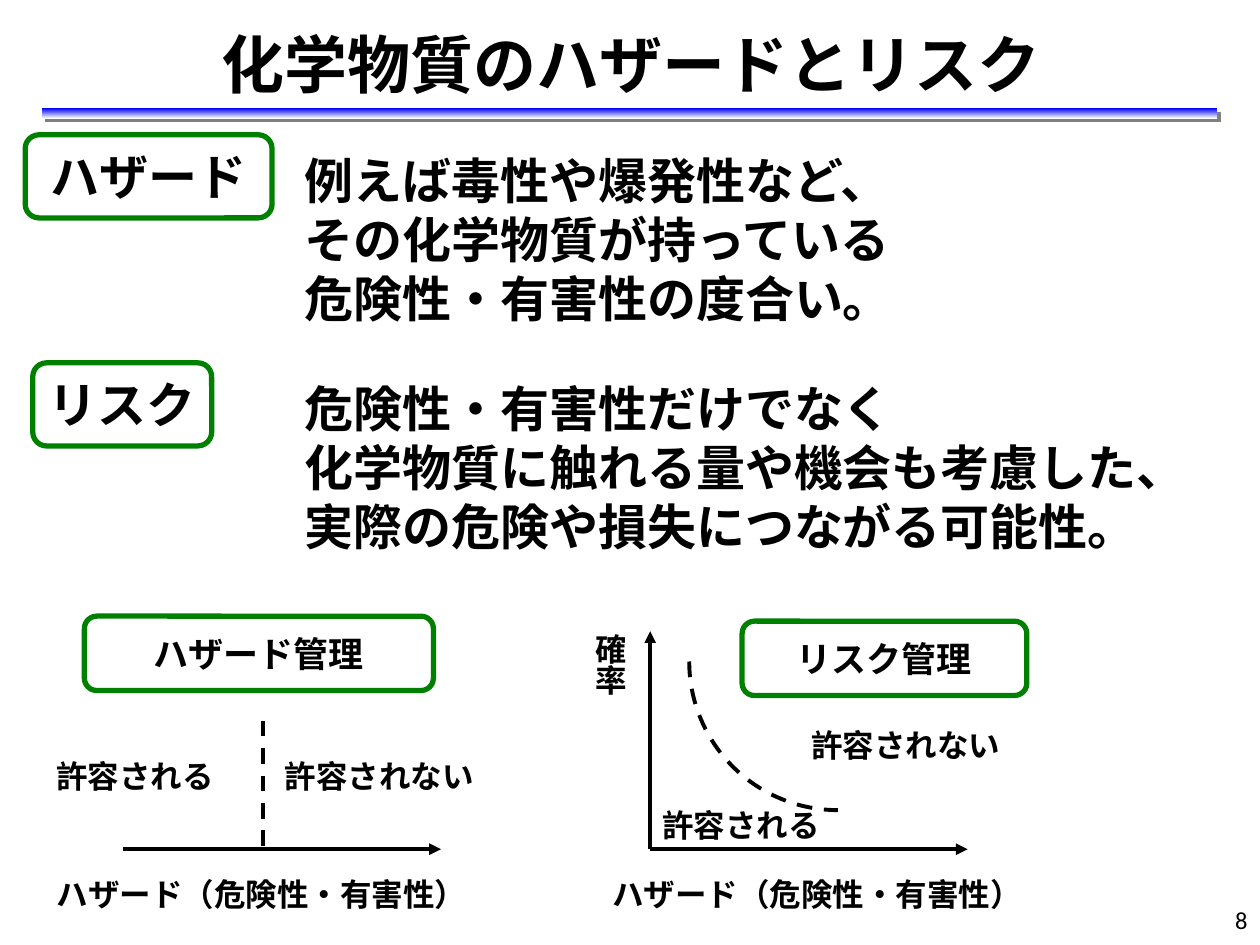
from math import cos, pi, sin

from lxml.etree import SubElement
from pptx import Presentation
from pptx.dml.color import RGBColor
from pptx.enum.dml import MSO_LINE
from pptx.enum.shapes import MSO_CONNECTOR, MSO_SHAPE
from pptx.enum.text import MSO_ANCHOR, PP_ALIGN
from pptx.oxml.ns import qn
from pptx.util import Inches, Pt

TITLE = "化学物質のハザードとリスク"
PAGE = "8"
AXIS_LABEL = "ハザード（危険性・有害性）"
ALLOWED, DENIED = "許容される", "許容されない"
BLACK, GREEN, BLUE, WHITE, GRAY = "000000", "008000", "0000FF", "FFFFFF", "808080"

BADGES = [
    ("ハザード", 28, (0.2, 1.07, 1.96, 0.66)),
    ("リスク", 28, (0.26, 2.88, 1.42, 0.66)),
    ("ハザード管理", 20, (0.67, 4.89, 2.77, 0.59)),
    ("リスク管理", 20, (5.89, 4.93, 2.26, 0.59)),
]
DEFINITIONS = [
    (["例えば毒性や爆発性など、", "その化学物質が持っている", "危険性・有害性の度合い。"],
     (2.32, 0.99, 5.59, 1.81)),
    (["危険性・有害性だけでなく",
      "化学物質に触れる量や機会も考慮した、実際の危険や損失につながる可能性。"],
     (2.32, 2.88, 6.85, 1.65)),
]
AXIS_Y, AXIS_LEN, LABEL_H = 6.74, 2.52, 0.39
HAZARD_X, RISK_X, LIMIT_X = 0.98, 5.16, 2.09
LABELS = [
    (AXIS_LABEL, (0.35, 6.9, 3.62)),
    (AXIS_LABEL, (4.76, 6.9, 3.62)),
    (ALLOWED, (0.35, 5.96, 1.73)),
    (DENIED, (2.16, 5.96, 1.89)),
    (ALLOWED, (RISK_X, AXIS_Y - LABEL_H, 1.73)),
    (DENIED, (6.34, 5.72, 1.89)),
]
LINES = [
    ((HAZARD_X, AXIS_Y), (HAZARD_X + AXIS_LEN, AXIS_Y), False),
    ((LIMIT_X, 5.72), (LIMIT_X, AXIS_Y), True),
    ((RISK_X, AXIS_Y), (RISK_X + AXIS_LEN, AXIS_Y), False),
    ((RISK_X, AXIS_Y), (RISK_X, 5.01), False),
]
CURVE_CENTER, CURVE_R, CURVE_STEPS = (6.65, 5.25), 1.18, 40


def color(value):
    return RGBColor.from_string(value)


def inches(values):
    return [Inches(v) for v in values]


def write(sp, lines, size=18, font="Arial", bold=True, align=None, wrap=True):
    tf = sp.text_frame
    tf.word_wrap = wrap
    tf.vertical_anchor = MSO_ANCHOR.MIDDLE
    for i, line in enumerate(lines):
        p = tf.add_paragraph() if i else tf.paragraphs[0]
        p.alignment = align
        r = p.add_run()
        r.text = line
        r.font.size, r.font.name, r.font.bold = Pt(size), font, bold
        r.font.color.rgb = color(BLACK)
    return sp


def add_text(box, lines, **fmt):
    return write(s.shapes.add_textbox(*inches(box)), lines, **fmt)


def stroke(sp, value=BLACK, width=2.25, dashed=False):
    sp.line.color.rgb = color(value)
    sp.line.width = Pt(width)
    if dashed:
        sp.line.dash_style = MSO_LINE.DASH


def add_rule():
    sp = s.shapes.add_shape(MSO_SHAPE.RECTANGLE, *inches((0.33, 0.86, 9.33, 0.08)))
    sp.line.fill.background()
    sp.fill.gradient()
    sp.fill.gradient_angle = 270
    for stop, value in zip(sp.fill.gradient_stops, (BLUE, WHITE)):
        stop.color.rgb = color(value)
    sp.shadow.inherit = False
    effects = sp._element.spPr.find(qn("a:effectLst"))
    shadow = SubElement(effects, qn("a:outerShdw"), blurRad="0", dist=str(Pt(2.8)),
                        dir=str(45 * 60000), algn="ctr", rotWithShape="0")
    SubElement(shadow, qn("a:srgbClr"), val=GRAY)


def add_badge(text, size, box):
    sp = s.shapes.add_shape(MSO_SHAPE.ROUNDED_RECTANGLE, *inches(box))
    sp.shadow.inherit = False
    sp.fill.background()
    stroke(sp, GREEN, 3)
    write(sp, [text], size=size, align=PP_ALIGN.CENTER, wrap=False)


def add_line(start, end, dashed):
    c = s.shapes.add_connector(MSO_CONNECTOR.STRAIGHT, *inches(start + end))
    stroke(c, dashed=dashed)
    if not dashed:
        SubElement(c.line._get_or_add_ln(), qn("a:tailEnd"), type="triangle")
    SubElement(c._element.spPr, qn("a:effectLst"))


def add_curve():
    cx, cy = CURVE_CENTER
    angles = [pi / 2 * i / CURVE_STEPS for i in range(CURVE_STEPS + 1)]
    points = [(Inches(cx - CURVE_R * cos(a)), Inches(cy + CURVE_R * sin(a)))
              for a in angles]
    builder = s.shapes.build_freeform(*points[0])
    builder.add_line_segments(points[1:], close=False)
    sp = builder.convert_to_shape()
    sp.shadow.inherit = False
    sp.fill.background()
    stroke(sp, dashed=True)


prs = Presentation()
prs.slide_width, prs.slide_height = inches((10, 7.5))
s = prs.slides.add_slide(prs.slide_layouts[5])

add_rule()
title = s.shapes.title
title.left, title.top, title.width, title.height = inches((0.35, 0.17, 9.31, 0.67))
write(title, [TITLE], size=36, font="Calibri", align=PP_ALIGN.CENTER)
add_text((7.67, 7.1, 2.33, 0.4), [PAGE], size=14, font="Calibri", bold=False,
         align=PP_ALIGN.RIGHT)

for badge in BADGES:
    add_badge(*badge)
for lines, box in DEFINITIONS:
    add_text(box, lines, size=28)
for text, place in LABELS:
    add_text(place + (LABEL_H,), [text])
for line in LINES:
    add_line(*line)
add_curve()
chance = add_text((4.53, 4.93, 0.63, 1.34), ["確率"], wrap=False)
chance.text_frame._txBody.bodyPr.set("vert", "eaVert")

prs.save("out.pptx")
